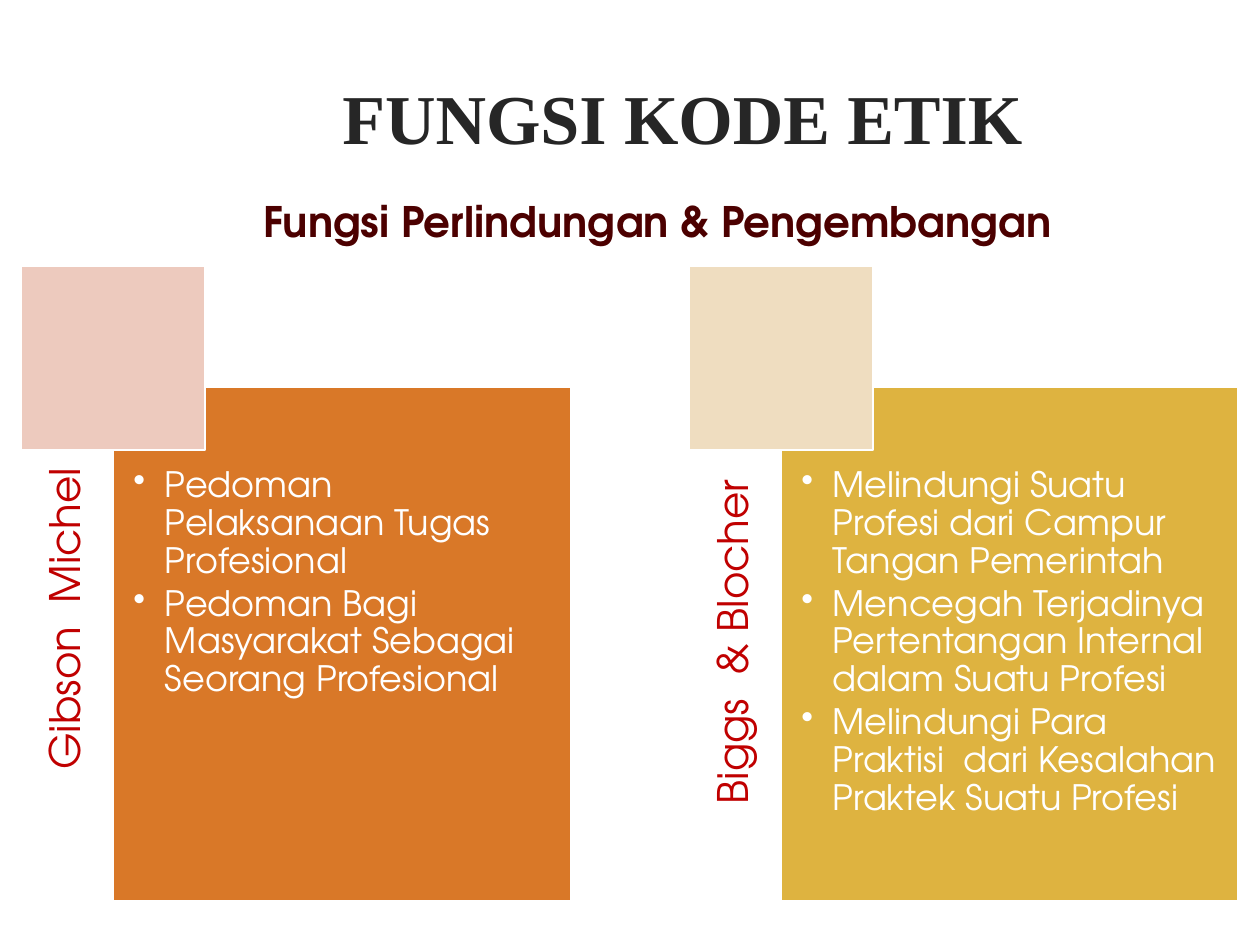
"""Build the slide on the functions of a code of ethics."""
from lxml.etree import SubElement
from pptx import Presentation
from pptx.dml.color import RGBColor
from pptx.enum.shapes import MSO_SHAPE
from pptx.enum.text import MSO_ANCHOR, PP_ALIGN
from pptx.oxml.ns import qn
from pptx.util import Pt

WHITE = RGBColor(0xFF, 0xFF, 0xFF)
INK = RGBColor(0x26, 0x26, 0x26)
MAROON = RGBColor(0x4C, 0x00, 0x00)
RED = RGBColor(0xC0, 0x00, 0x00)
ORANGE = RGBColor(0xD9, 0x78, 0x28)
PINK = RGBColor(0xED, 0xCA, 0xBE)
GOLD = RGBColor(0xDE, 0xB3, 0x40)
CREAM = RGBColor(0xEF, 0xDD, 0xC0)

SANS = "TeX Gyre Adventor"
SERIF = "Times New Roman"
LEFT, STEP = 12.2, 381.6
CARDS = [
    ("Gibson  Michel", ORANGE, PINK, [
        "Pedoman Pelaksanaan Tugas Profesional",
        "Pedoman Bagi Masyarakat Sebagai Seorang Profesional",
    ]),
    ("Biggs  & Blocher ", GOLD, CREAM, [
        "Melindungi Suatu Profesi dari Campur Tangan Pemerintah",
        "Mencegah Terjadinya Pertentangan Internal  dalam Suatu Profesi",
        "Melindungi Para Praktisi  dari Kesalahan Praktek Suatu Profesi",
    ]),
]


def write(frame, *lines, size=24, color=INK, font=SANS, bold=False,
          align=PP_ALIGN.LEFT, anchor=MSO_ANCHOR.TOP, inset=(7.2, 3.6, 7.2, 3.6),
          space=1.0, after=0, bullet=False):
    """Fill a text frame with formatted paragraphs."""
    frame.word_wrap = True
    frame.vertical_anchor = anchor
    (frame.margin_left, frame.margin_top,
     frame.margin_right, frame.margin_bottom) = map(Pt, inset)
    for i, line in enumerate(lines):
        para = frame.add_paragraph() if i else frame.paragraphs[0]
        para.text = line
        para.alignment = align
        para.line_spacing = space
        para.space_before = Pt(0)
        para.space_after = Pt(after)
        if bullet:
            props = para._p.get_or_add_pPr()
            props.set("marL", str(Pt(18)))
            props.set("indent", str(-Pt(18)))
            SubElement(props, qn("a:buChar"), char="•")
        face = para.runs[0].font
        face.name, face.size, face.bold = font, Pt(size), bold
        face.color.rgb = color


class Deck:
    """Hold the style and the current slide."""

    def __init__(self):
        """Start a deck with one title-only slide."""
        self.show = Presentation()
        self.show.slide_width, self.show.slide_height = Pt(720), Pt(540)
        self.slide = self.show.slides.add_slide(self.show.slide_layouts[5])
        self.edge = WHITE

    def title(self, text, x, y, w, h, **style):
        """Place and fill the title."""
        head = self.slide.shapes.title
        head.left, head.top, head.width, head.height = map(Pt, (x, y, w, h))
        write(head.text_frame, text, **style)

    def label(self, text, x, y, w, h, turn=0, **style):
        """Add a text box, turned if asked."""
        box = self.slide.shapes.add_textbox(*map(Pt, (x, y, w, h)))
        box.rotation = turn
        write(box.text_frame, text, **style)

    def block(self, x, y, w, h, fill):
        """Add a filled rectangle with the common edge."""
        rect = self.slide.shapes.add_shape(
            MSO_SHAPE.RECTANGLE, *map(Pt, (x, y, w, h)))
        rect.shadow.inherit = False
        rect.fill.solid()
        rect.fill.fore_color.rgb = fill
        rect.line.color.rgb = self.edge
        rect.line.width = Pt(1.25)
        return rect

    def card(self, x, name, fill, tint, points):
        """Add a side name, a bullet panel and its corner square."""
        self.label(name, x - 120.9, 342, 293.8, 52.6, turn=270, color=RED,
                   align=PP_ALIGN.RIGHT, anchor=MSO_ANCHOR.MIDDLE,
                   inset=(0, 0, 46, 0), space=0.9, after=8.4)
        panel = self.block(x + 52.6, 221, 261.4, 293.8, fill)
        write(panel.text_frame, *points, size=20, color=WHITE, bullet=True,
              inset=(11.5, 46, 11.5, 11.5), space=0.9, after=3)
        self.block(x, 152, 105, 105, tint)


def main():
    """Build and save the slide."""
    deck = Deck()
    deck.title("FUNGSI KODE ETIK", 96, 21.6, 588, 90, size=40, font=SERIF,
               bold=True, align=PP_ALIGN.CENTER, anchor=MSO_ANCHOR.MIDDLE)
    deck.label("Fungsi Perlindungan & Pengembangan", 143.3, 108, 496.8, 42.5,
               color=MAROON, bold=True)
    for i, card in enumerate(CARDS):
        deck.card(LEFT + i * STEP, *card)
    deck.show.save("out.pptx")


if __name__ == "__main__":
    main()
